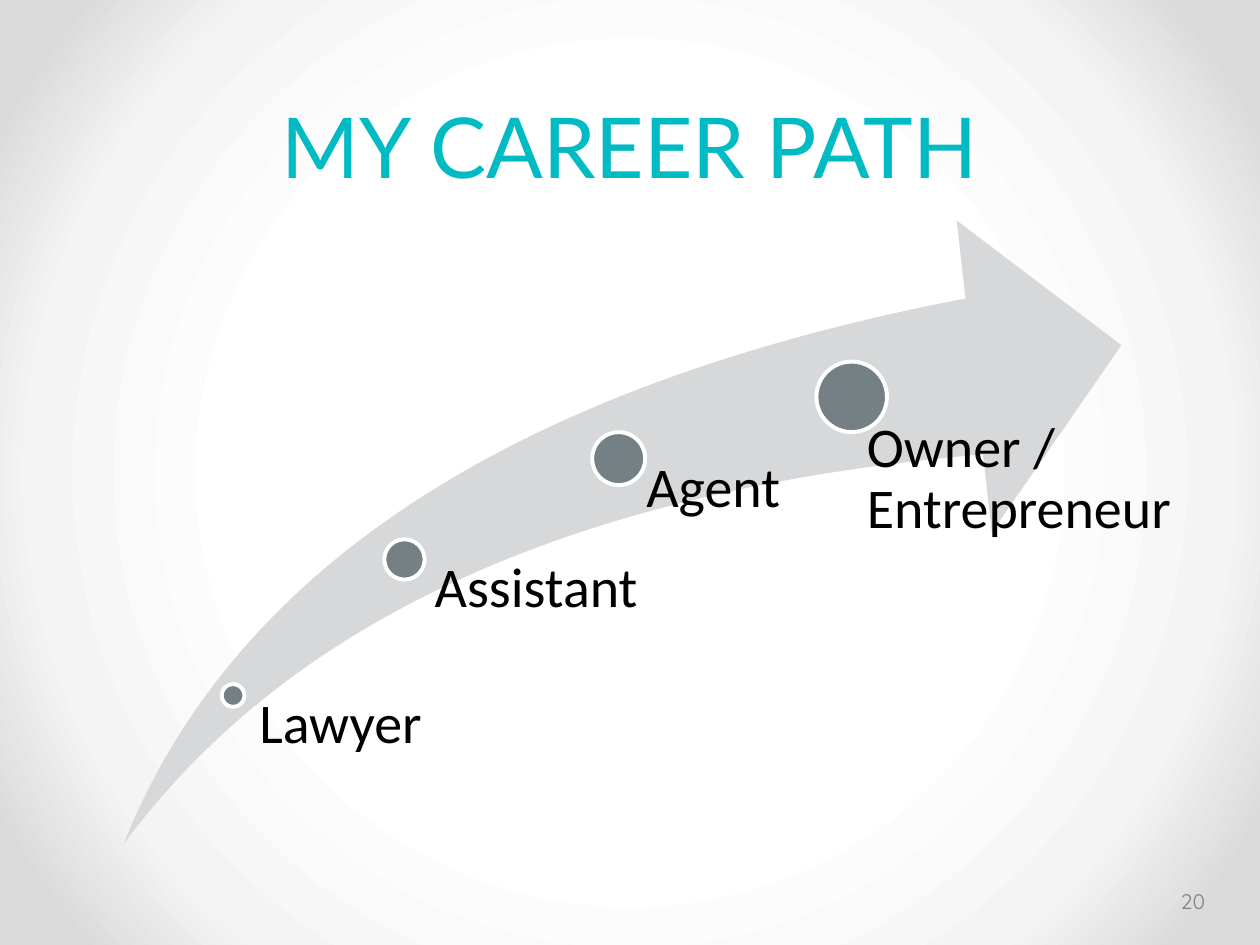
from lxml import etree
from pptx import Presentation
from pptx.dml.color import RGBColor
from pptx.enum.shapes import MSO_SHAPE as SHAPE
from pptx.enum.text import MSO_ANCHOR as ANCHOR, PP_ALIGN as ALIGN
from pptx.oxml import parse_xml
from pptx.oxml.ns import nsdecls, qn
from pptx.util import Inches, Pt

COLORS = {"title": "00BAC4", "arrow": "D6D8D9", "dot": "758085",
          "ring": "FFFFFF", "label": "000000", "number": "808080"}
BACKGROUND = [(50, "FFFFFF"), (76, "F4F4F4"), (92, "DADADA")]
TITLE = "MY CAREER PATH"
PAGE = "20"
# label, dot centre x, dot centre y, dot diameter, label box, left inset
STAGES = [
    ("Lawyer", (1.85, 5.52), 0.18, (1.96, 5.52, 2.16, 1.18), 0.1),
    ("Assistant", (3.21, 4.44), 0.32, (3.28, 4.44, 1.97, 2.26), 0.17),
    ("Agent", (4.91, 3.64), 0.42, (4.91, 3.64, 1.66, 3.06), 0.22),
    ("Owner / Entrepreneur", (6.76, 3.15), 0.56, (6.58, 3.33, 2.83, 0.63), 0.3),
]


def rgb(name):
    return RGBColor.from_string(COLORS[name])


def set_background(s):
    s.background.fill.solid()
    bg = s.element.find(".//" + qn("p:bgPr"))
    stops = "".join(f'<a:gs pos="{pos * 1000}"><a:srgbClr val="{color}"/></a:gs>'
                    for pos, color in BACKGROUND)
    grad = parse_xml(
        f'<a:gradFill {nsdecls("a")} rotWithShape="1"><a:gsLst>{stops}</a:gsLst>'
        '<a:path path="circle"><a:fillToRect l="50000" t="50000" r="50000" b="50000"/>'
        '</a:path></a:gradFill>')
    bg.replace(bg[0], grad)


def add_shape(shapes, kind, box, color):
    sp = shapes.add_shape(kind, *map(Inches, box))
    sp.shadow.inherit = False
    sp.fill.solid()
    sp.fill.fore_color.rgb = rgb(color)
    sp.line.fill.background()
    return sp


def add_text(shapes, text, box, font, size, color, insets,
             anchor=ANCHOR.TOP, align=ALIGN.LEFT, spacing=None):
    tf = shapes.add_textbox(*map(Inches, box)).text_frame
    tf.word_wrap = True
    tf.vertical_anchor = anchor
    tf.margin_left, tf.margin_top, tf.margin_right, tf.margin_bottom = map(Inches, insets)
    p = tf.paragraphs[0]
    p.text = text
    p.alignment = align
    p.line_spacing = spacing
    r = p.runs[0]
    r.font.name = font
    r.font.size = Pt(size)
    r.font.color.rgb = rgb(color)


prs = Presentation()
prs.slide_width, prs.slide_height = Inches(10), Inches(7.5)
s = prs.slides.add_slide(prs.slide_layouts[6])
set_background(s)

add_text(s.shapes, TITLE, (0.5, 0.15, 9, 1.45), "Lato", 48, "title",
         (0.1, 0.05, 0.1, 0.05), ANCHOR.BOTTOM, ALIGN.CENTER, Pt(58))

path = s.shapes.add_group_shape().shapes
arrow = add_shape(path, SHAPE.SWOOSH_ARROW, (0.98, 1.75, 7.92, 4.95), "arrow")
arrow.adjustments[0] = arrow.adjustments[1] = 0.25

for label, (x, y), size, box, inset in STAGES:
    dot = add_shape(path, SHAPE.OVAL, (x - size / 2, y - size / 2, size, size), "dot")
    dot.line.color.rgb = rgb("ring")
    dot.line.width = Pt(2.25)
    add_text(path, label, box, "Calibri", 32, "label", (inset, 0, 0, 0), spacing=0.9)

add_text(s.shapes, PAGE, (9.34, 6.95, 0.61, 0.4), "Quicksand", 12, "number",
         (0.03, 0.05, 0.05, 0.05), ANCHOR.MIDDLE)

prs.save("out.pptx")
